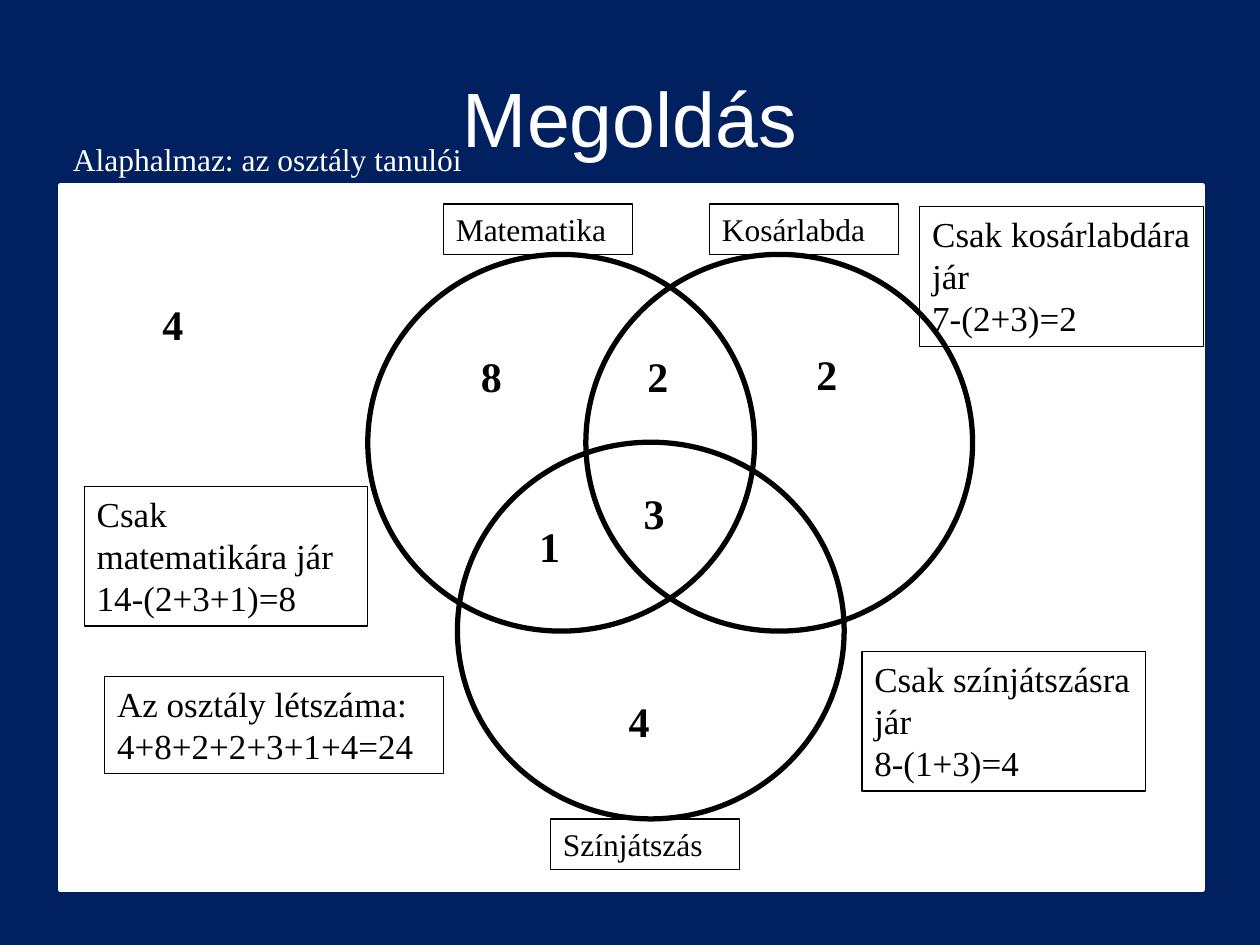
from pptx import Presentation
from pptx.dml.color import RGBColor
from pptx.enum.shapes import MSO_SHAPE
from pptx.enum.text import MSO_ANCHOR, MSO_AUTO_SIZE, PP_ALIGN
from pptx.util import Pt

NAVY, WHITE, BLACK = "002060", "FFFFFF", "000000"
SERIF = "Times New Roman"
TITLE = "Megoldás"
UNIVERSE = "Alaphalmaz: az osztály tanulói"
FRAME = (34.5, 106, 652.5, 402.5)
CIRCLE_SIZE = (221, 215.25)
LABEL_SIZE = (108, 28.8)
COUNT_SIZE = (33, 36)

CIRCLES = [(210.2, 145.4), (334.8, 145.4), (261.4, 252.7)]
SET_LABELS = [
    ("Matematika", 253.4, 116.6),
    ("Kosárlabda", 405.4, 116.6),
    ("Színjátszás", 314.6, 468),
]
COUNTS = [
    ("3", 360.7, 275),
    ("2", 362.9, 196.6),
    ("1", 301, 293.8),
    ("4", 85.7, 167),
    ("8", 267.8, 196.6),
    ("2", 459.4, 195.8),
    ("4", 352.1, 393.8),
]
NOTES = [
    (["Csak matematikára jár", "14-(2+3+1)=8"], (48.2, 277.9, 162, 79.9)),
    (["Csak kosárlabdára jár", "7-(2+3)=2"], (525.6, 118.1, 162, 79.9)),
    (["Csak színjátszásra jár", "8-(1+3)=4"], (492.5, 372.2, 162, 79.9)),
    (["Az osztály létszáma:", "4+8+2+2+3+1+4=24"], (59.8, 386.6, 193.7, 55.4)),
]


def rgb(value):
    return RGBColor.from_string(value)


def write(tf, *lines, size, font=SERIF, color=BLACK, bold=False, align=PP_ALIGN.LEFT):
    for i, line in enumerate(lines):
        p = tf.paragraphs[0] if i == 0 else tf.add_paragraph()
        p.alignment = align
        r = p.add_run()
        r.text = line
        r.font.size, r.font.name, r.font.bold = Pt(size), font, bold
        r.font.color.rgb = rgb(color)


def add_outline(shapes, kind, box, line, width, fill=None):
    sp = shapes.add_shape(kind, *map(Pt, box))
    sp.shadow.inherit = False
    if fill:
        sp.fill.solid()
        sp.fill.fore_color.rgb = rgb(fill)
    else:
        sp.fill.background()
    sp.line.color.rgb = rgb(line)
    sp.line.width = Pt(width)
    return sp


def add_text(s, *lines, box, border=False, **fmt):
    if border:
        sp = add_outline(s.shapes, MSO_SHAPE.RECTANGLE, box, BLACK, 0.75)
    else:
        sp = s.shapes.add_textbox(*map(Pt, box))
    tf = sp.text_frame
    tf.word_wrap = True
    tf.auto_size = MSO_AUTO_SIZE.SHAPE_TO_FIT_TEXT
    tf.vertical_anchor = MSO_ANCHOR.TOP
    write(tf, *lines, **fmt)


def main():
    prs = Presentation()
    prs.slide_width, prs.slide_height = Pt(720), Pt(540)
    s = prs.slides.add_slide(prs.slide_layouts[5])
    s.background.fill.solid()
    s.background.fill.fore_color.rgb = rgb(NAVY)

    title = s.shapes.title
    title.left, title.top, title.width, title.height = map(Pt, (36, 21.6, 648, 90))
    title.text_frame.vertical_anchor = MSO_ANCHOR.MIDDLE
    write(title.text_frame, TITLE, size=44, font="Arial", color=WHITE, align=PP_ALIGN.CENTER)

    add_outline(s.shapes, MSO_SHAPE.RECTANGLE, FRAME, WHITE, 3, fill=WHITE)
    venn = s.shapes.add_group_shape()
    for corner in CIRCLES:
        add_outline(venn.shapes, MSO_SHAPE.OVAL, corner + CIRCLE_SIZE, BLACK, 3)

    add_text(s, UNIVERSE, box=(34.6, 76.3, 265.7, 28.8), size=18, color=WHITE)
    for name, x, y in SET_LABELS:
        add_text(s, name, box=(x, y) + LABEL_SIZE, border=True, size=18)
    for count, x, y in COUNTS:
        add_text(s, count, box=(x, y) + COUNT_SIZE, size=24, bold=True)
    for lines, box in NOTES:
        add_text(s, *lines, box=box, border=True, size=20)

    prs.save("out.pptx")


if __name__ == "__main__":
    main()
